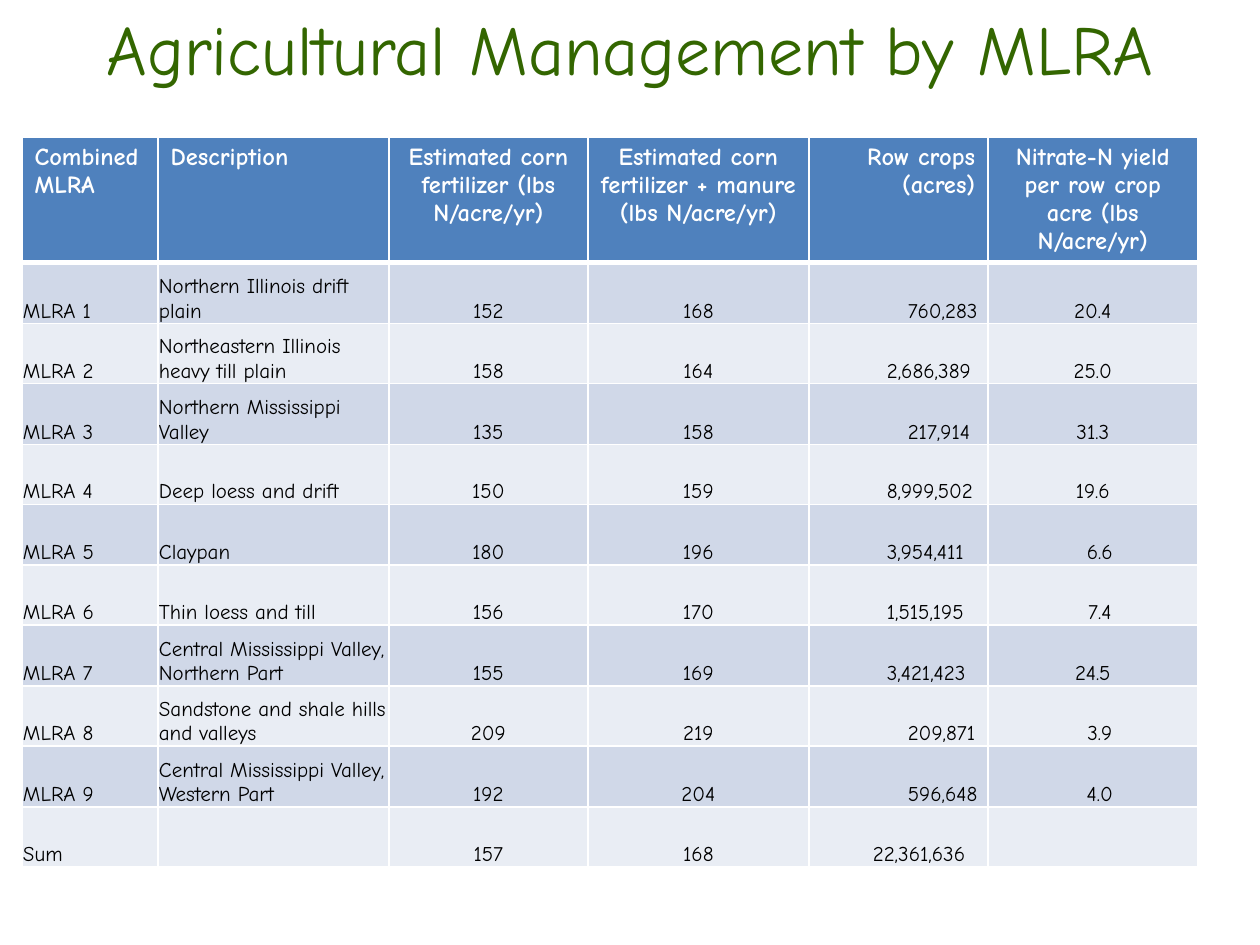
from lxml import etree
from pptx import Presentation
from pptx.dml.color import RGBColor
from pptx.enum.text import MSO_ANCHOR, PP_ALIGN
from pptx.oxml.ns import qn
from pptx.util import Pt

PX = 914400 // 126
LEFT, MID, RIGHT = PP_ALIGN.LEFT, PP_ALIGN.CENTER, PP_ALIGN.RIGHT
MIDDLE, BOTTOM = MSO_ANCHOR.MIDDLE, MSO_ANCHOR.BOTTOM
GREEN = RGBColor(0x33, 0x66, 0x00)
BLUE = RGBColor(0x4F, 0x81, 0xBD)
BANDS = RGBColor(0xE9, 0xED, 0xF4), RGBColor(0xD0, 0xD8, 0xE8)
WHITE = RGBColor(0xFF, 0xFF, 0xFF)
BLACK = RGBColor(0, 0, 0)
FACE = "Comic Neue"

HEADS = ["Combined MLRA", "Description",
         "Estimated corn fertilizer (lbs N/acre/yr)",
         "Estimated corn fertilizer + manure (lbs N/acre/yr)",
         "Row crops (acres)",
         "Nitrate-N yield per row crop acre (lbs N/acre/yr)"]
ROWS = [
    ["MLRA 1", "Northern Illinois drift plain", "152", "168", "760,283", "20.4"],
    ["MLRA 2", "Northeastern Illinois heavy till plain", "158", "164", "2,686,389", "25.0"],
    ["MLRA 3", "Northern Mississippi Valley", "135", "158", "217,914", "31.3"],
    ["MLRA 4", "Deep loess and drift", "150", "159", "8,999,502", "19.6"],
    ["MLRA 5", "Claypan", "180", "196", "3,954,411", "6.6"],
    ["MLRA 6", "Thin loess and till", "156", "170", "1,515,195", "7.4"],
    ["MLRA 7", "Central Mississippi Valley, Northern Part", "155", "169", "3,421,423", "24.5"],
    ["MLRA 8", "Sandstone and shale hills and valleys", "209", "219", "209,871", "3.9"],
    ["MLRA 9", "Central Mississippi Valley, Western Part", "192", "204", "596,648", "4.0"],
    ["Sum", "", "157", "168", "22,361,636", ""],
]
WIDTHS = [136, 231, 199, 221, 179, 210]
HEAD_ALIGN = [LEFT, LEFT, MID, MID, RIGHT, MID]
BODY_ALIGN = [LEFT, LEFT, MID, MID, LEFT, MID]
ACRES, YIELD = 4, 5
# Left inset in px by text length, to line the digits up
INSETS = {ACRES: {7: 99, 9: 78, 10: 64}, YIELD: {3: 15}}


def style(para, size, color, align, bold=False):
    para.alignment = align
    font = para.font
    font.name, font.size, font.bold = FACE, Pt(size), bold
    font.color.rgb = color


def border(cell, side, width):
    line = etree.SubElement(cell._tc.get_or_add_tcPr(), qn("a:ln" + side),
                            w=str(Pt(width)))
    fill = etree.SubElement(line, qn("a:solidFill"))
    etree.SubElement(fill, qn("a:srgbClr"), val=str(WHITE))


prs = Presentation()
prs.slide_width, prs.slide_height = 1260 * PX, 945 * PX
slide = prs.slides.add_slide(prs.slide_layouts[5])

# Title
title = slide.shapes.title
title.left, title.top, title.width, title.height = 0, 0, 1260 * PX, 94 * PX
title.text_frame.text = "Agricultural Management by MLRA"
title.text_frame.vertical_anchor = MIDDLE
style(title.text_frame.paragraphs[0], 40, GREEN, MID)

# Table grid
table = slide.shapes.add_table(len(ROWS) + 1, len(HEADS), 22 * PX, 137 * PX,
                               sum(WIDTHS) * PX, 736 * PX).table
for col, width in zip(table.columns, WIDTHS):
    col.width = width * PX
for r, row in enumerate(table.rows):
    row.height = (60 + r % 2 if r else 105) * PX

# Cells
for r, texts in enumerate([HEADS] + ROWS):
    for c, text in enumerate(texts):
        cell = table.cell(r, c)
        for side in "LRTB":
            thick = (r, side) in ((0, "B"), (1, "T"))
            border(cell, side, 3 if thick else 1)
        cell.fill.solid()
        cell.fill.fore_color.rgb = BANDS[r % 2] if r else BLUE
        cell.text = text
        para = cell.text_frame.paragraphs[0]
        if r == 0:
            style(para, 14, WHITE, HEAD_ALIGN[c], True)
            continue
        style(para, 12, BLACK, BODY_ALIGN[c])
        cell.vertical_anchor = BOTTOM
        cell.margin_left = INSETS.get(c, {}).get(len(text), 1) * PX
        cell.margin_right = cell.margin_top = PX
        cell.margin_bottom = 0

prs.save("out.pptx")
